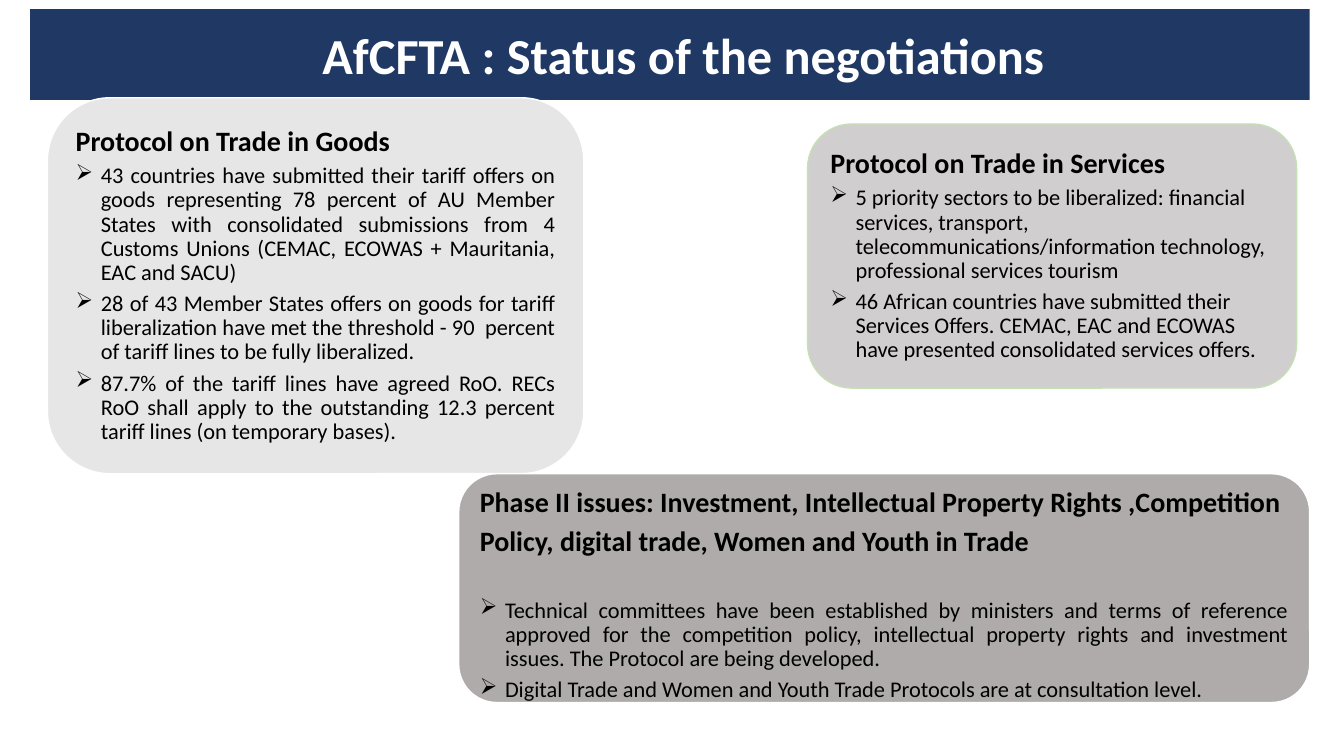
from dataclasses import dataclass

from lxml.etree import SubElement
from pptx import Presentation
from pptx.dml.color import RGBColor
from pptx.enum.shapes import MSO_SHAPE
from pptx.enum.text import MSO_ANCHOR, PP_ALIGN
from pptx.oxml.ns import qn
from pptx.util import Inches, Pt


@dataclass(frozen=True)
class Theme:
    font: str = "Calibri"
    navy: str = "203864"
    white: str = "FFFFFF"
    black: str = "000000"
    pale: str = "E7E6E6"
    mid: str = "D0CECE"
    dark: str = "AFABAB"
    green: str = "C5E0B4"
    title: int = 36
    head: int = 20
    body: int = 16


THEME = Theme()

GOODS = [
    "43 countries have submitted their tariff offers on goods representing "
    "78 percent of AU Member States with consolidated submissions from 4 "
    "Customs Unions (CEMAC, ECOWAS + Mauritania, EAC and SACU)",
    "28 of 43 Member States offers on goods for tariff liberalization have "
    "met the threshold - 90  percent of tariff lines to be fully liberalized.",
    "87.7% of the tariff lines have agreed RoO. RECs RoO shall apply to the "
    "outstanding 12.3 percent tariff lines (on temporary bases).",
]
PHASE = [
    "Technical committees have been established by ministers and terms of "
    "reference approved for the competition policy, intellectual property "
    "rights and investment issues. The Protocol are being developed.",
    "Digital Trade and Women and Youth Trade Protocols are at consultation level.",
]
SERVICES = [
    "5 priority sectors to be liberalized: financial services, transport, "
    "telecommunications/information technology, professional services tourism",
    "46 African countries have submitted their Services Offers. CEMAC, EAC "
    "and ECOWAS have presented consolidated services offers.",
]


def place(shape, box):
    shape.left, shape.top, shape.width, shape.height = map(Inches, box)


def paint(fill, color):
    fill.solid()
    fill.fore_color.rgb = RGBColor.from_string(color)


def add_run(para, text, size, color, bold=False):
    run = para.add_run()
    run.text = text
    run.font.name = THEME.font
    run.font.size = Pt(size)
    run.font.bold = bold
    run.font.color.rgb = RGBColor.from_string(color)


def indent(para, left, first=0):
    props = para._p.get_or_add_pPr()
    props.set("marL", str(Inches(left)))
    props.set("indent", str(Inches(first)))
    return props


def add_title(slide, text, box):
    title = slide.shapes.title
    place(title, box)
    # Rounded banner outline on the title itself
    geom = SubElement(title._element.spPr, qn("a:prstGeom"), prst="roundRect")
    SubElement(geom, qn("a:avLst"))
    paint(title.fill, THEME.navy)
    frame = title.text_frame
    frame.vertical_anchor = MSO_ANCHOR.MIDDLE
    para = frame.paragraphs[0]
    para.alignment = PP_ALIGN.CENTER
    para.line_spacing = 1
    indent(para, 0.27)
    add_run(para, text, THEME.title, THEME.white, True)


def add_bullet(frame, text, align):
    para = frame.add_paragraph()
    props = indent(para, 0.25, -0.25)
    SubElement(props, qn("a:buChar"), char="➢")
    para.alignment = align
    para.line_spacing = 0.9
    para.space_before = Pt(5)
    add_run(para, text, THEME.body, THEME.black)


def add_card(slide, box, fill, line, head, points,
             align=PP_ALIGN.JUSTIFY, spacing=0.9, after=0, pads=(0.05, 0.05)):
    card = slide.shapes.add_shape(
        MSO_SHAPE.ROUNDED_RECTANGLE, *map(Inches, box))
    card.shadow.inherit = False
    paint(card.fill, fill)
    paint(card.line.fill, line)
    card.line.width = Pt(1)
    frame = card.text_frame
    frame.word_wrap = True
    frame.vertical_anchor = MSO_ANCHOR.MIDDLE
    frame.margin_top, frame.margin_bottom = map(Inches, pads)
    para = frame.paragraphs[0]
    para.alignment = PP_ALIGN.LEFT
    para.line_spacing = spacing
    para.space_after = Pt(after)
    add_run(para, head, THEME.head, THEME.black, True)
    for point in points:
        add_bullet(frame, point, align)


def main():
    deck = Presentation()
    deck.slide_width, deck.slide_height = Inches(13.33), Inches(7.5)
    slide = deck.slides.add_slide(deck.slide_layouts[5])

    # Banner
    add_title(slide, "AfCFTA : Status of the negotiations",
              (0.3, 0.09, 12.69, 0.9))

    # Protocol cards
    add_card(slide, (0.47, 0.97, 5.32, 3.73), THEME.pale, THEME.white,
             "Protocol on Trade in Goods", GOODS)
    add_card(slide, (4.55, 4.7, 8.44, 2.27), THEME.dark, THEME.white,
             "Phase II issues: Investment, Intellectual Property Rights "
             ",Competition Policy, digital trade, Women and Youth in Trade",
             PHASE, spacing=1.15, after=25, pads=(0.06, 0))
    add_card(slide, (8.01, 1.23, 4.85, 2.62), THEME.mid, THEME.green,
             "Protocol on Trade in Services", SERVICES, PP_ALIGN.LEFT)

    deck.save("out.pptx")


if __name__ == "__main__":
    main()
